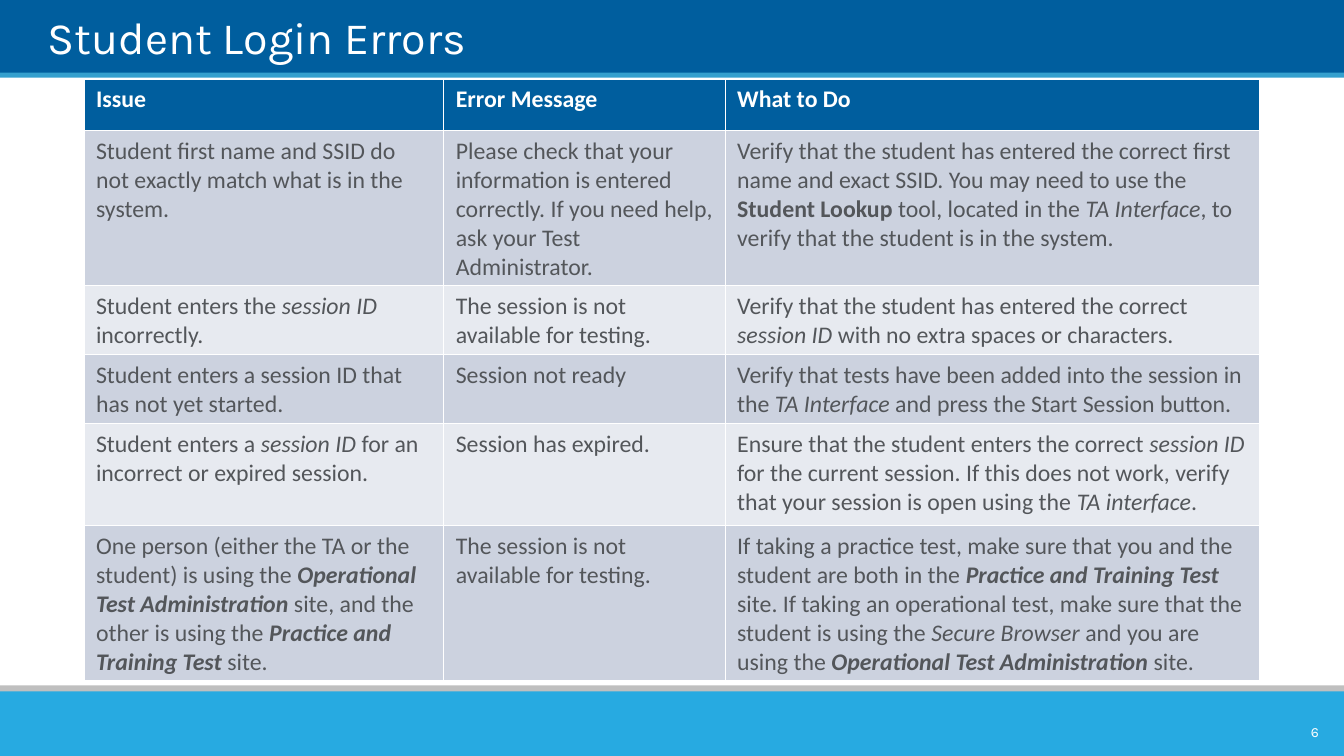
from pptx import Presentation
from pptx.dml.color import RGBColor
from pptx.enum import shapes, text
from pptx.util import Pt

NAVY = RGBColor(0x00, 0x5E, 0x9E)
BLUE = RGBColor(0x35, 0xA0, 0xCE)
SKY = RGBColor(0x27, 0xAA, 0xE1)
SILVER = RGBColor(0xBF, 0xBF, 0xBF)
BANDS = RGBColor(0xCC, 0xD2, 0xDF), RGBColor(0xE7, 0xEA, 0xF0)
INK = RGBColor(0x53, 0x56, 0x5A)
WHITE = RGBColor(0xFF, 0xFF, 0xFF)

WIDTH, HEIGHT = 960, 540
COLUMN_WIDTHS = 257, 201, 382
ROW_HEIGHTS = 36.7, 108, 48.3, 48.3, 72.7, 108

# Asterisks enclose bold text, underscores italic text.
LOGIN_ERRORS = [
    ("Issue", "Error Message", "What to Do"),
    ("Student first name and SSID do not exactly match what is in the system.",
     "Please check that your information is entered correctly. "
     "If you need help, ask your Test Administrator.",
     "Verify that the student has entered the correct first name and exact SSID. "
     "You may need to use the *Student Lookup *tool, located in the _TA Interface_, "
     "to verify that the student is in the system."),
    ("Student enters the _session ID_ incorrectly.",
     "The session is not available for testing.",
     "Verify that the student has entered the correct _session ID _with no extra "
     "spaces or characters."),
    ("Student enters a session ID that has not yet started.",
     "Session not ready",
     "Verify that tests have been added into the session in the _TA Interface_ "
     "and press the Start Session button."),
    ("Student enters a _session ID _for an incorrect or expired session.",
     "Session has expired.",
     "Ensure that the student enters the correct _session ID _for the current session. "
     "If this does not work, verify that your session is open using the _TA interface_."),
    ("One person (either the TA or the student) is using the "
     "*_Operational Test Administration_* site, and the other is using the "
     "*_Practice and Training Test _*site.",
     "The session is not available for testing.",
     "If taking a practice test, make sure that you and the student are both in the "
     "*_Practice and Training Test _*site. If taking an operational test, make sure that "
     "the student is using the _Secure Browser _and you are using the "
     "*_Operational Test Administration _*site."),
]


def set_font(paragraph, name, size, color):
    paragraph.font.name = name
    paragraph.font.size = Pt(size)
    paragraph.font.color.rgb = color


def add_bar(slide, left, top, width, height, color):
    bar = slide.shapes.add_shape(shapes.MSO_SHAPE.RECTANGLE,
                                 Pt(left), Pt(top), Pt(width), Pt(height))
    bar.shadow.inherit = False
    bar.fill.solid()
    bar.fill.fore_color.rgb = color
    bar.line.fill.background()


def clear_margins(frame):
    frame.margin_left = frame.margin_top = frame.margin_right = frame.margin_bottom = 0


def add_header(slide, left, top, width, height):
    add_bar(slide, left, top, width, height - 3.2, NAVY)
    add_bar(slide, left, top + height - 3.6, width, 3.6, BLUE)
    title = slide.shapes.title
    title.left, title.top = Pt(left + 34), Pt(top + 5)
    title.width, title.height = Pt(width - 92), Pt(41)
    frame = title.text_frame
    clear_margins(frame)
    frame.vertical_anchor = text.MSO_ANCHOR.BOTTOM
    heading = frame.paragraphs[0]
    heading.text = "Student Login Errors"
    heading.alignment = text.PP_ALIGN.LEFT
    set_font(heading, "Karla", 32, WHITE)
    slide.shapes._spTree.append(title._element)  # brings the title in front of its bar


def add_footer(slide, left, top, width, height):
    add_bar(slide, left, top, width, 10, SILVER)
    add_bar(slide, left, top + 4.3, width, height - 4.3, SKY)
    number_box = slide.shapes.add_textbox(Pt(left + width - 39.6), Pt(top + 22.4),
                                          Pt(28.8), Pt(21))
    frame = number_box.text_frame
    frame.word_wrap = True
    frame.vertical_anchor = text.MSO_ANCHOR.MIDDLE
    number = frame.paragraphs[0]
    number.text = "6"
    number.alignment = text.PP_ALIGN.RIGHT
    set_font(number, "Karla", 10, WHITE)


def write_marked(paragraph, marked):
    """Add runs, switching bold at each asterisk and italic at each underscore."""
    for bold, chunk in enumerate(marked.split("*")):
        for italic, words in enumerate(chunk.split("_")):
            if words:
                run = paragraph.add_run()
                run.text = words
                if bold % 2:
                    run.font.bold = True
                if italic % 2:
                    run.font.italic = True


def add_error_table(slide, left, top, width, height):
    table = slide.shapes.add_table(len(LOGIN_ERRORS), len(COLUMN_WIDTHS),
                                   Pt(left), Pt(top), Pt(width), Pt(height)).table
    for column, column_width in zip(table.columns, COLUMN_WIDTHS):
        column.width = Pt(column_width)
    for row_index, (row, row_height) in enumerate(zip(table.rows, ROW_HEIGHTS)):
        row.height = Pt(row_height)
        is_header = row_index == 0
        for cell, marked in zip(row.cells, LOGIN_ERRORS[row_index]):
            cell.margin_left = cell.margin_right = Pt(8.6)
            cell.margin_top = cell.margin_bottom = Pt(4.3)
            cell.fill.solid()
            cell.fill.fore_color.rgb = NAVY if is_header else BANDS[(row_index - 1) % 2]
            paragraph = cell.text_frame.paragraphs[0]
            write_marked(paragraph, marked)
            set_font(paragraph, "Calibri", 17, WHITE if is_header else INK)
            if is_header:
                paragraph.font.bold = True


def main():
    deck = Presentation()
    deck.slide_width, deck.slide_height = Pt(WIDTH), Pt(HEIGHT)
    slide = deck.slides.add_slide(deck.slide_layouts[5])
    add_header(slide, 0, -0.5, WIDTH, 56)
    add_footer(slide, 0, 489.6, WIDTH, HEIGHT - 489.6)
    add_error_table(slide, 60, 56.6, sum(COLUMN_WIDTHS), sum(ROW_HEIGHTS))
    deck.save("out.pptx")


if __name__ == "__main__":
    main()
